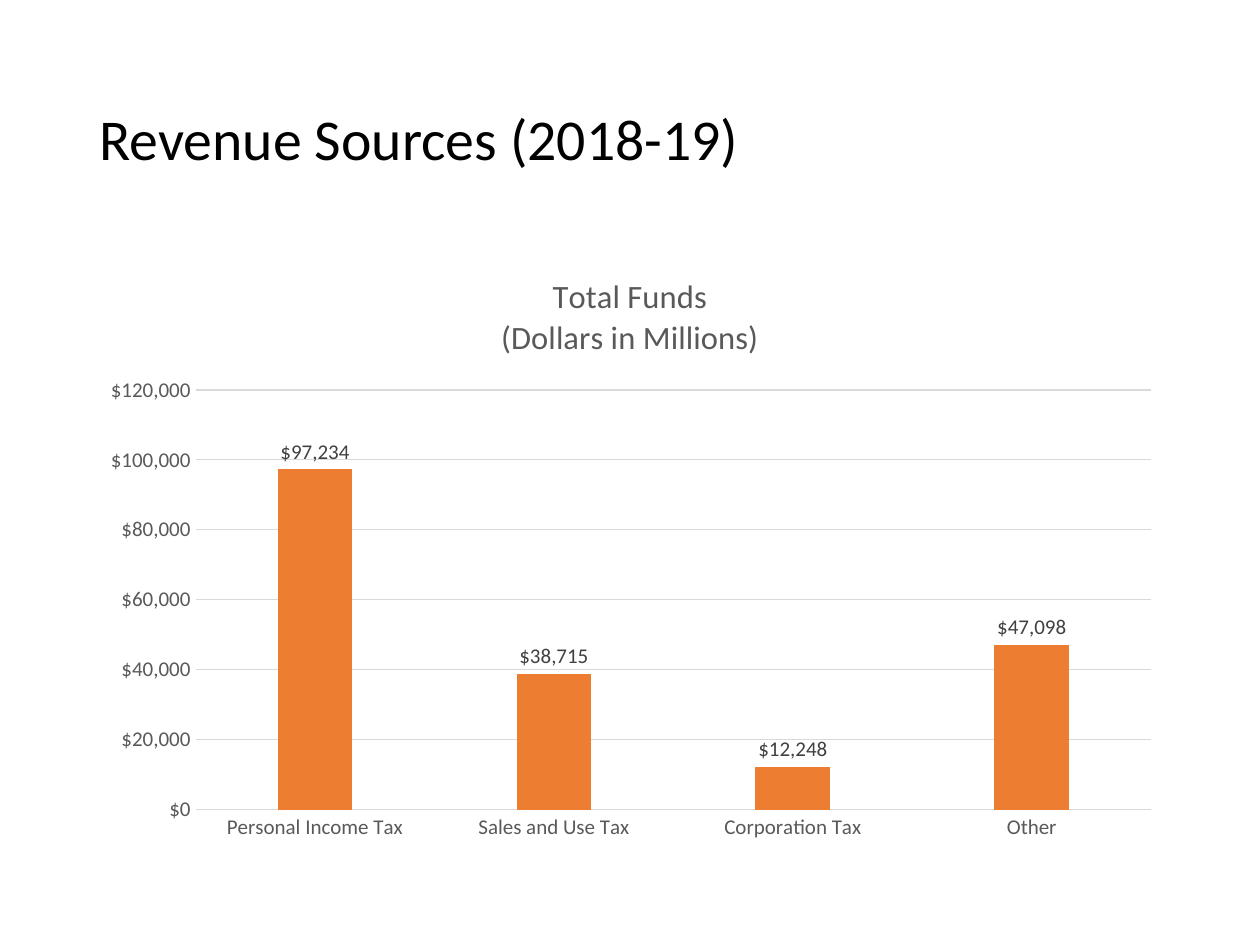
from lxml import etree
from pptx import Presentation
from pptx.chart.data import CategoryChartData
from pptx.dml.color import RGBColor
from pptx.enum.chart import XL_CHART_TYPE, XL_LABEL_POSITION, XL_TICK_MARK
from pptx.enum.text import MSO_ANCHOR, PP_ALIGN
from pptx.oxml.ns import qn
from pptx.util import Inches, Pt

BLACK = RGBColor(0x00, 0x00, 0x00)
DARK = RGBColor(0x40, 0x40, 0x40)
GRAY = RGBColor(0x59, 0x59, 0x59)
RULE = RGBColor(0xD9, 0xD9, 0xD9)
ORANGE = RGBColor(0xED, 0x7D, 0x31)

COLUMN = XL_CHART_TYPE.COLUMN_CLUSTERED
OUTSIDE = XL_LABEL_POSITION.OUTSIDE_END
NO_TICK = XL_TICK_MARK.NONE
MIDDLE = MSO_ANCHOR.MIDDLE
LEFT = PP_ALIGN.LEFT

FONT = "Calibri"
DOLLARS = '"$"#,##0'
REVENUE = {
    "Personal Income Tax": 97234,
    "Sales and Use Tax": 38715,
    "Corporation Tax": 12248,
    "Other": 47098,
}


def set_font(font, size, color):
    font.name = FONT
    font.size = Pt(size)
    font.bold = False
    font.color.rgb = color


def set_line(line):
    line.color.rgb = RULE
    line.width = Pt(0.75)


def set_plot_box(chart, x, y, w, h):
    """Fix the inner plot area, in fractions of the chart."""
    area = chart.plots[0]._element.getparent()
    for old in area.findall(qn("c:layout")):
        area.remove(old)
    layout = etree.Element(qn("c:layout"))
    area.insert(0, layout)
    manual = etree.SubElement(layout, qn("c:manualLayout"))
    parts = {"layoutTarget": "inner", "xMode": "edge", "yMode": "edge",
             "x": x, "y": y, "w": w, "h": h}
    for tag, value in parts.items():
        etree.SubElement(manual, qn(f"c:{tag}"), val=str(value))


def place_title(slide, box, text):
    title = slide.shapes.title
    title.left, title.top, title.width, title.height = box
    frame = title.text_frame
    frame.text = text
    frame.vertical_anchor = MIDDLE
    par = frame.paragraphs[0]
    par.alignment = LEFT
    par.line_spacing = 0.9
    set_font(par.font, 33, BLACK)


def style_axes(chart):
    for axis in (chart.category_axis, chart.value_axis):
        axis.major_tick_mark = axis.minor_tick_mark = NO_TICK
        set_font(axis.tick_labels.font, 12, GRAY)
    set_line(chart.category_axis.format.line)
    values = chart.value_axis
    values.format.line.fill.background()
    values.minimum_scale, values.maximum_scale = 0, 120000
    values.major_unit = 20000
    set_line(values.major_gridlines.format.line)
    values.tick_labels.number_format = DOLLARS
    values.tick_labels.number_format_is_linked = False


def style_bars(plot):
    plot.gap_width = 219
    plot.overlap = -27
    plot.vary_by_categories = False
    bars = plot.series[0]
    bars.format.fill.solid()
    bars.format.fill.fore_color.rgb = ORANGE
    labels = bars.data_labels
    labels.show_value = True
    labels.position = OUTSIDE
    labels.number_format = DOLLARS
    labels.number_format_is_linked = False
    set_font(labels.font, 12, DARK)


def place_chart(slide, box):
    data = CategoryChartData(number_format=DOLLARS)
    data.categories = list(REVENUE)
    data.add_series("Series 1", list(REVENUE.values()))
    chart = slide.shapes.add_chart(COLUMN, *box, data).chart
    set_font(chart.font, 10, BLACK)
    chart.has_legend = False
    chart.has_title = True
    frame = chart.chart_title.text_frame
    frame.text = "Total Funds\n(Dollars in Millions)"
    for par in frame.paragraphs:
        set_font(par.font, 18.6, GRAY)
    chart.chart_title.include_in_layout = False
    style_axes(chart)
    style_bars(chart.plots[0])
    set_plot_box(chart, 0.1, 0.23, 0.88, 0.7)


def main():
    deck = Presentation()
    deck.slide_width, deck.slide_height = Inches(10), Inches(7.5)
    slide = deck.slides.add_slide(deck.slide_layouts[5])
    left, width = Inches(0.69), Inches(8.62)
    place_title(slide, (left, Inches(0.4), width, Inches(1.45)),
                "Revenue Sources (2018-19)")
    place_chart(slide, (left, Inches(2), width, Inches(4.76)))
    deck.save("out.pptx")


if __name__ == "__main__":
    main()
